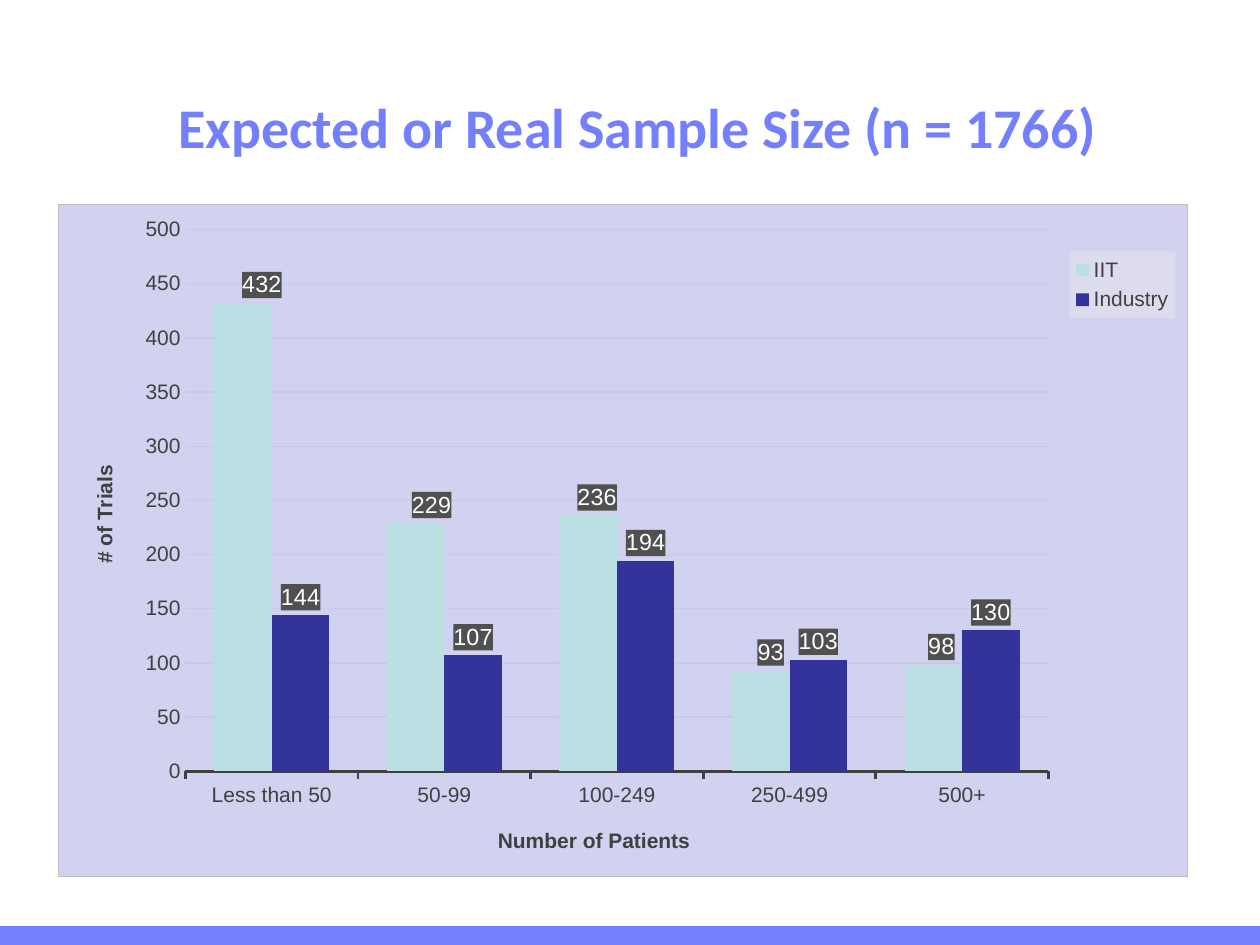
from copy import deepcopy

from pptx import Presentation
from pptx import util as u
from pptx.chart.data import CategoryChartData
from pptx.dml.color import RGBColor
from pptx.enum import chart as ch, shapes, text
from pptx.oxml import parse_xml
from pptx.oxml.ns import nsdecls

PX_PER_INCH = 126
COLORS = {"accent": "7480FB", "panel": "D1D1F0", "border": "BFBFBF",
          "ink": "404040", "grid": "C9C9E6", "legend": "DCDCEE",
          "label": "505050", "white": "FFFFFF", "iit": "BBE0E3",
          "industry": "333399"}
CATEGORIES = ["Less than 50", "50-99", "100-249", "250-499", "500+"]
# name, colour, values, sideways shift of each value label in px
TRIALS = [("IIT", "iit", (432, 229, 236, 93, 98), (19, 16, 9, 10, 8)),
          ("Industry", "industry", (144, 107, 194, 103, 130), ())]


def px(length):
    return u.Emu(round(length * 914400 / PX_PER_INCH))


def rgb(name):
    return RGBColor.from_string(COLORS[name])


def style(font, size, color="ink", bold=False, name="Arial"):
    font.name, font.size, font.bold = name, u.Pt(size), bold
    font.color.rgb = rgb(color)


def fill_xml(fill, border=None):
    """Shape properties for chart parts without a format object."""
    def solid(name):
        return f'<a:solidFill><a:srgbClr val="{COLORS[name]}"/></a:solidFill>'
    line = f'<a:ln w="9525">{solid(border)}</a:ln>' if border else ""
    return parse_xml(f'<c:spPr {nsdecls("c", "a")}>{solid(fill)}{line}</c:spPr>')


def layout_xml(modes="", **fractions):
    parts = "".join(f'<c:{key} val="{value:.4f}"/>'
                    for key, value in fractions.items())
    return parse_xml(f'<c:layout {nsdecls("c")}><c:manualLayout>{modes}{parts}'
                     '</c:manualLayout></c:layout>')


def place_part(part, box, left, top, width=None, height=None, inner=False):
    """Fix a chart part at px offsets inside the chart box."""
    for old in part.xpath("./c:layout"):
        part.remove(old)
    modes = '<c:layoutTarget val="inner"/>' if inner else ""
    modes += '<c:xMode val="edge"/><c:yMode val="edge"/>'
    fractions = {"x": left / box[2], "y": top / box[3]}
    if width:
        fractions.update(w=width / box[2], h=height / box[3])
    layout = layout_xml(modes, **fractions)
    overlay = part.xpath("./c:overlay")
    if overlay:
        overlay[0].addprevious(layout)
    else:
        part.insert(0, layout)


def add_title(slide, box):
    title = slide.shapes.title
    title.left, title.top, title.width, title.height = map(px, box)
    frame = title.text_frame
    frame.word_wrap = True
    frame.vertical_anchor = text.MSO_ANCHOR.MIDDLE
    paragraph = frame.paragraphs[0]
    paragraph.alignment = text.PP_ALIGN.CENTER
    run = paragraph.add_run()
    run.text = "Expected or Real Sample Size (n = 1766)"
    style(run.font, 32, "accent", True, "Calibri")


def add_footer_band(slide, box):
    band = slide.shapes.add_shape(shapes.MSO_SHAPE.RECTANGLE, *map(px, box))
    band.shadow.inherit = False
    band.fill.solid()
    band.fill.fore_color.rgb = rgb("accent")
    band.line.fill.background()


def format_axis(axis, title, box, left, top):
    style(axis.tick_labels.font, 12)
    run = axis.axis_title.text_frame.paragraphs[0].add_run()
    run.text = title
    style(run.font, 12, bold=True)
    place_part(axis.axis_title.element, box, left, top)


def format_series(series, color, shifts):
    series.format.fill.solid()
    series.format.fill.fore_color.rgb = rgb(color)
    series.invert_if_negative = False
    labels = series.data_labels
    labels.show_value = True
    labels.position = ch.XL_LABEL_POSITION.OUTSIDE_END
    style(labels.font, 13.3, "white")
    group = series.format.element.xpath("./c:dLbls")[0] if hasattr(
        series.format, "element") else labels._element
    group.xpath("./c:txPr")[0].addprevious(fill_xml("label"))
    shared = [part for part in group if not part.tag.endswith("showLeaderLines")]
    # Labels moved sideways keep the shared look
    for index, shift in enumerate(shifts):
        label = parse_xml(f'<c:dLbl {nsdecls("c")}><c:idx val="{index}"/></c:dLbl>')
        label.append(layout_xml(x=shift / 1130, y=0))
        label.extend(deepcopy(part) for part in shared)
        group.insert(index, label)


def add_trials_chart(slide, box):
    data = CategoryChartData()
    data.categories = CATEGORIES
    for name, _, values, _ in TRIALS:
        data.add_series(name, values)
    chart = slide.shapes.add_chart(ch.XL_CHART_TYPE.COLUMN_CLUSTERED,
                                   *map(px, box), data).chart
    style(chart.font, 10)
    chart.has_title = False
    root = chart.element
    root.xpath("./c:txPr")[0].addprevious(fill_xml("panel", "border"))
    place_part(root.xpath(".//c:plotArea")[0], box, 127, 25, 864, 543, True)

    # Columns
    plot = chart.plots[0]
    plot.gap_width, plot.overlap, plot.vary_by_categories = 100, 0, False
    for series, (_, color, _, shifts) in zip(plot.series, TRIALS):
        format_series(series, color, shifts)

    # Axes
    patients, trials = chart.category_axis, chart.value_axis
    format_axis(patients, "Number of Patients", box, 436, 621)
    format_axis(trials, "# of Trials", box, 29, 257)
    patients.format.line.color.rgb = rgb("ink")
    patients.format.line.width = u.Pt(1.5)
    patients.major_tick_mark = ch.XL_TICK_MARK.OUTSIDE
    trials.minimum_scale, trials.maximum_scale, trials.major_unit = 0, 500, 50
    trials.major_tick_mark = ch.XL_TICK_MARK.NONE
    trials.format.line.fill.background()
    trials.major_gridlines.format.line.color.rgb = rgb("grid")
    trials.major_gridlines.format.line.width = u.Pt(0.75)

    # Legend
    chart.has_legend = True
    chart.legend.position = ch.XL_LEGEND_POSITION.RIGHT
    chart.legend.include_in_layout = False
    style(chart.legend.font, 12)
    legend = root.xpath(".//c:legend")[0]
    legend.xpath("./c:txPr")[0].addprevious(fill_xml("legend"))
    place_part(legend, box, 1012, 47, 106, 67)


def main():
    deck = Presentation()
    deck.slide_width, deck.slide_height = px(1260), px(945)
    slide = deck.slides.add_slide(deck.slide_layouts[5])
    add_footer_band(slide, (0, 926, 1260, 19))
    add_title(slide, (154, 49, 968, 155))
    add_trials_chart(slide, (58, 204, 1130, 673))
    deck.save("out.pptx")


if __name__ == "__main__":
    main()
